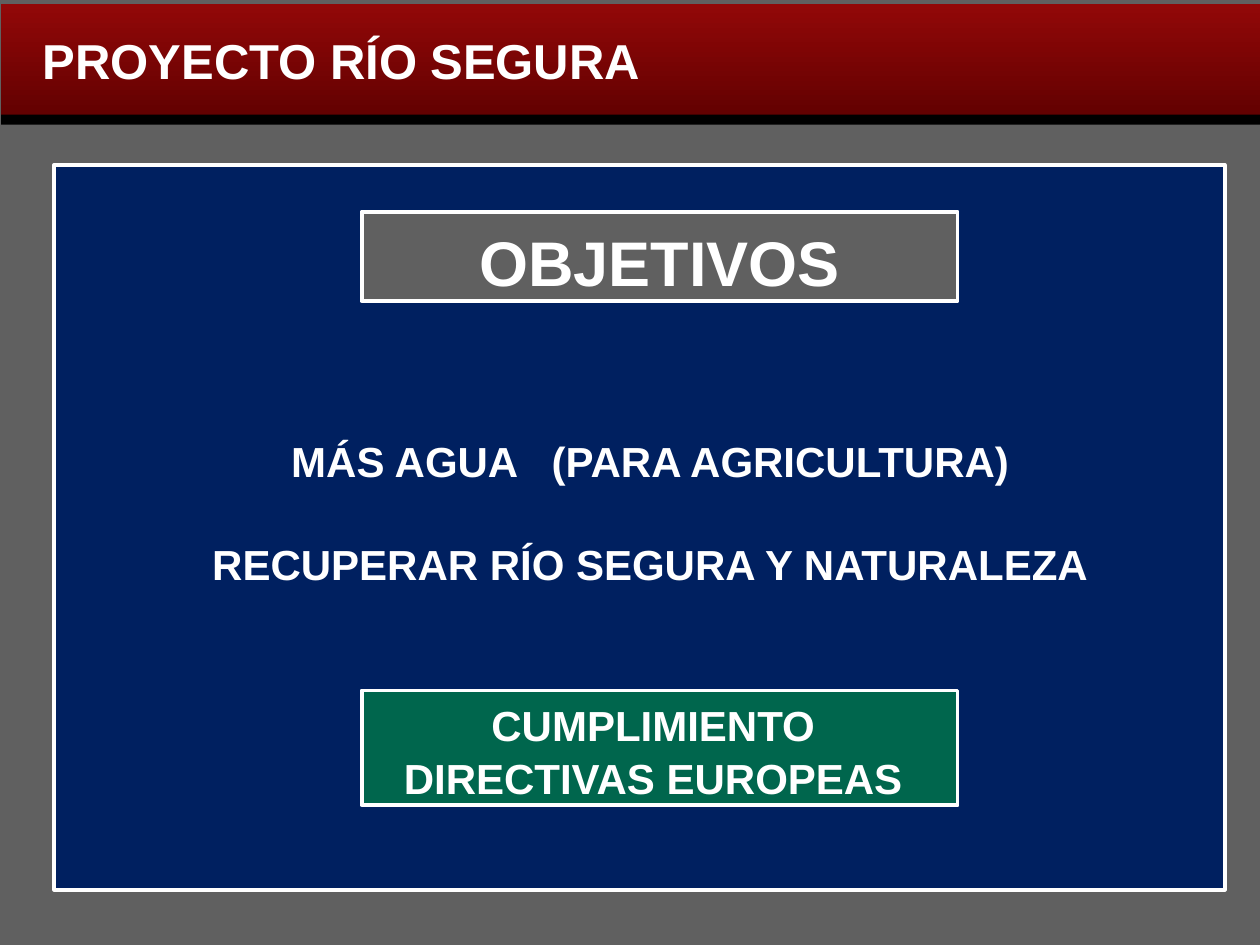
from dataclasses import dataclass

from lxml import etree
from pptx import Presentation, util as u
from pptx.dml.color import RGBColor
from pptx.enum import shapes, text
from pptx.oxml.ns import qn

# Content
TITLE = "PROYECTO RÍO SEGURA"
HEADING = "OBJETIVOS"
GOALS = ["MÁS AGUA   (PARA AGRICULTURA)", "RECUPERAR RÍO SEGURA Y NATURALEZA"]
OUTCOME = "CUMPLIMIENTO DIRECTIVAS EUROPEAS"


@dataclass(frozen=True)
class Theme:
    font: str = "Arial"
    ink: str = "FFFFFF"
    background: str = "606060"
    panel: str = "002060"
    outcome: str = "00664D"
    rule: str = "000000"
    bar: tuple = ("920808", "630101")
    title_size: int = 28
    heading_size: int = 36
    body_size: int = 24
    outline: float = 2.25
    line_spacing: float = 1.05
    goal_gap: float = 28.7


THEME = Theme()

# Layout: left, top, width, height as percentages of the slide
BAR_LEFT, BAR_WIDTH, BAR_TOP, BAR_HEIGHT = 0.1, 99.9, 0.4, 11.73
BOX_LEFT, BOX_WIDTH = 28.7, 47.3
AREAS = {
    "bar": (BAR_LEFT, BAR_TOP, BAR_WIDTH, BAR_HEIGHT),
    "rule": (BAR_LEFT, BAR_TOP + BAR_HEIGHT, BAR_WIDTH, 1.07),
    "panel": (4.3, 17.47, 92.9, 76.67),
    "heading": (BOX_LEFT, 22.4, BOX_WIDTH, 9.47),
    "outcome": (BOX_LEFT, 73.07, BOX_WIDTH, 12.13),
    "title": (2.4, 2.4, 97.6, 7.6),
    "goals": (7.5, 39.73, 88.2, 39.07),
}

presentation = Presentation()
presentation.slide_width, presentation.slide_height = u.Inches(10), u.Inches(7.5)
slide = presentation.slides.add_slide(presentation.slide_layouts[1])


def place(name):
    """Turn an area's percentages into slide lengths."""
    sides = (presentation.slide_width, presentation.slide_height) * 2
    return [round(share * side / 100) for share, side in zip(AREAS[name], sides)]


def add_box(name, color, outlined=False):
    shape = slide.shapes.add_shape(shapes.MSO_SHAPE.RECTANGLE, *place(name))
    shape.shadow.inherit = False
    shape.fill.solid()
    shape.fill.fore_color.rgb = RGBColor.from_string(color)
    if outlined:
        shape.line.color.rgb = RGBColor.from_string(THEME.ink)
        shape.line.width = u.Pt(THEME.outline)
    else:
        shape.line.fill.background()
    return shape


def write(shape, lines, size, align, anchor, gap=0, top=0.05, right=0.1):
    """Fill a shape with one bold run per paragraph, insets in inches."""
    frame = shape.text_frame
    frame.word_wrap = True
    frame.auto_size = text.MSO_AUTO_SIZE.NONE
    frame.vertical_anchor = anchor
    frame.margin_top, frame.margin_right = u.Inches(top), u.Inches(right)
    for index, line in enumerate(lines):
        paragraph = frame.add_paragraph() if index else frame.paragraphs[0]
        paragraph.alignment = align
        paragraph.line_spacing = THEME.line_spacing
        paragraph.space_before = u.Pt(gap if index else 0)
        run = paragraph.add_run()
        run.text = line
        run.font.name, run.font.size, run.font.bold = THEME.font, u.Pt(size), True
        run.font.color.rgb = RGBColor.from_string(THEME.ink)


def bring_forward(placeholder, name):
    """Position a placeholder and put it in front of the boxes drawn so far."""
    placeholder.left, placeholder.top, placeholder.width, placeholder.height = place(name)
    slide.shapes.element.append(placeholder.element)


# Background and header bar
slide.background.fill.solid()
slide.background.fill.fore_color.rgb = RGBColor.from_string(THEME.background)
bar = add_box("bar", THEME.bar[0])
bar.fill.gradient()
bar.fill.gradient_angle = 270
for position, (stop, color) in enumerate(zip(bar.fill.gradient_stops, THEME.bar)):
    stop.position = position
    stop.color.rgb = RGBColor.from_string(color)
add_box("rule", THEME.rule)

# Panel and heading
CENTER, LEFT = text.PP_ALIGN.CENTER, text.PP_ALIGN.LEFT
TOP, MIDDLE = text.MSO_ANCHOR.TOP, text.MSO_ANCHOR.MIDDLE
add_box("panel", THEME.panel, outlined=True)
heading = add_box("heading", THEME.background, outlined=True)
write(heading, [HEADING], THEME.heading_size, CENTER, MIDDLE, top=0.09)

# Goals, without bullets
goals = slide.placeholders[1]
bring_forward(goals, "goals")
write(goals, GOALS, THEME.body_size, CENTER, TOP, gap=THEME.goal_gap, top=0.46)
for paragraph in goals.text_frame.paragraphs:
    properties = paragraph._p.get_or_add_pPr()
    properties.set("marL", "0")
    properties.set("indent", "0")
    etree.SubElement(properties, qn("a:buNone"))

# Outcome
outcome = add_box("outcome", THEME.outcome, outlined=True)
write(outcome, [OUTCOME], THEME.body_size, CENTER, TOP, right=0.2)

# Title
title = slide.shapes.title
bring_forward(title, "title")
write(title, [TITLE], THEME.title_size, LEFT, MIDDLE)

presentation.save("out.pptx")
